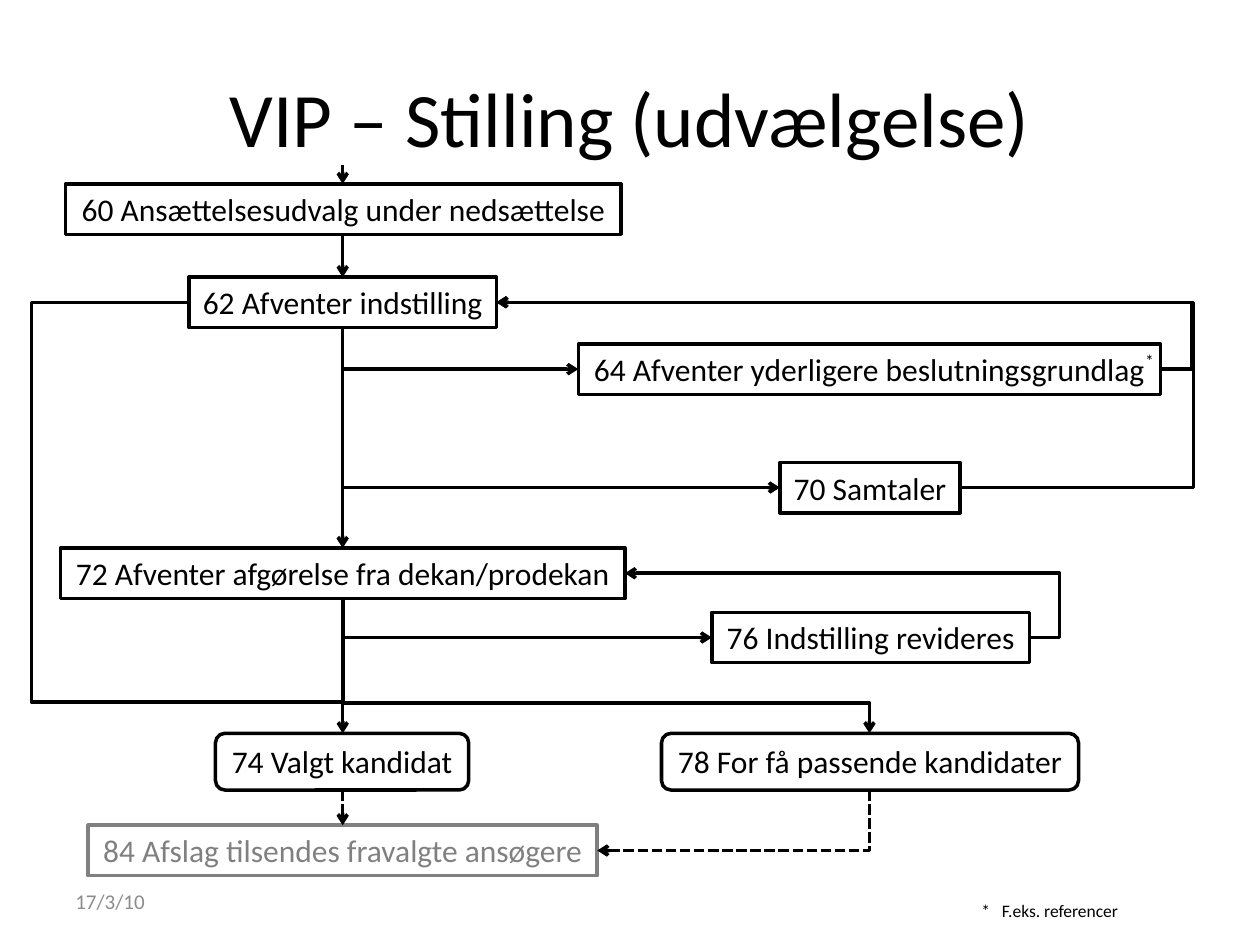
from dataclasses import dataclass

import pptx
import pptx.dml.color
import pptx.enum.dml
import pptx.enum.shapes
import pptx.enum.text
import pptx.oxml
import pptx.oxml.ns
import pptx.util
from pptx.util import Inches

COLORS = {"black": "000000", "gray": "808080", "date": "8C8C8C"}
FONT = "Calibri"
LINE_WIDTH = pptx.util.Pt(2)
BOX = pptx.enum.shapes.MSO_SHAPE.FLOWCHART_PROCESS
ROUNDED = pptx.enum.shapes.MSO_SHAPE.FLOWCHART_ALTERNATE_PROCESS
CENTER = pptx.enum.text.PP_ALIGN.CENTER
LEFT = pptx.enum.text.PP_ALIGN.LEFT
TOP = pptx.enum.text.MSO_ANCHOR.TOP
MIDDLE = pptx.enum.text.MSO_ANCHOR.MIDDLE


@dataclass
class Step:
    text: str
    left: float
    top: float
    width: float
    height: float = 0.4
    shape_type: int = BOX
    color: str = "black"


@dataclass
class Arrow:
    """An arrow; turns holds the fixed coordinates of its middle segments."""
    begin: tuple[float, float]
    end: tuple[float, float]
    geometry: str = "line"
    turns: tuple[float, ...] = ()
    starts_down: bool = False
    dashed: bool = False


@dataclass
class Label:
    text: str
    left: float
    top: float
    width: float
    height: float
    size: int = 10
    color: str = "black"
    anchor: int = TOP


SPINE = 2.72  # x of the main flow
REJECT = 6.9  # x of the branch to step 78

STEPS = [
    Step("60 Ansættelsesudvalg under nedsættelse", 0.52, 1.46, 4.41),
    Step("62 Afventer indstilling", 1.5, 2.2, 2.44),
    Step("64 Afventer yderligere beslutningsgrundlag", 4.59, 2.73, 4.62),
    Step("70 Samtaler", 6.19, 3.67, 1.43),
    Step("72 Afventer afgørelse fra dekan/prodekan", 0.48, 4.35, 4.48),
    Step("76 Indstilling revideres", 5.65, 4.86, 2.52),
    Step("74 Valgt kandidat", 1.71, 5.82, 2.01, 0.45, ROUNDED),
    Step("78 For få passende kandidater", 5.25, 5.82, 3.31, 0.45, ROUNDED),
    Step("84 Afslag tilsendes fravalgte ansøgere", 0.7, 6.55, 4.04, color="gray"),
]

ARROWS = [
    # Main flow
    Arrow((SPINE, 1.31), (SPINE, 1.46)),
    Arrow((SPINE, 1.87), (SPINE, 2.2)),
    Arrow((SPINE, 2.6), (SPINE, 4.35)),
    Arrow((SPINE, 6.27), (SPINE, 6.55), dashed=True),
    # Branches
    Arrow((SPINE, 2.6), (4.59, 2.93), "bentConnector2", starts_down=True),
    Arrow((SPINE, 2.6), (6.19, 3.87), "bentConnector2", starts_down=True),
    Arrow((SPINE, 4.75), (5.65, 5.06), "bentConnector2", starts_down=True),
    Arrow((SPINE, 4.75), (REJECT, 5.82), "bentConnector3", (5.58,), True),
    Arrow((REJECT, 6.27), (4.74, 6.75), "bentConnector2", (), True, True),
    Arrow((1.5, 2.4), (SPINE, 5.82), "bentConnector4", (0.25, 5.57)),
    # Returns
    Arrow((9.21, 2.93), (3.94, 2.4), "bentConnector3", (9.46,)),
    Arrow((7.62, 3.87), (3.94, 2.4), "bentConnector3", (9.47,)),
    Arrow((8.16, 5.06), (4.96, 4.55), "bentConnector3", (8.41,)),
]

LABELS = [
    Label("17/3/10", 0.5, 6.95, 2.33, 0.4, 12, "date", MIDDLE),
    Label("*   F.eks. referencer", 7.69, 7.09, 2.21, 0.27),
    Label("*", 8.99, 2.73, 0.27, 0.27),
]


def rgb(name: str) -> pptx.dml.color.RGBColor:
    return pptx.dml.color.RGBColor.from_string(COLORS[name])


def write(shape, text: str, size: int, color: str, alignment: int) -> None:
    paragraph = shape.text_frame.paragraphs[0]
    paragraph.alignment = alignment
    run = paragraph.add_run()
    run.text = text
    run.font.name = FONT
    run.font.size = pptx.util.Pt(size)
    run.font.color.rgb = rgb(color)


def draw_step(slide, step: Step) -> None:
    shape = slide.shapes.add_shape(step.shape_type, Inches(step.left), Inches(step.top),
                                   Inches(step.width), Inches(step.height))
    shape.shadow.inherit = False
    shape.fill.background()
    shape.line.color.rgb = rgb(step.color)
    shape.line.width = LINE_WIDTH
    frame = shape.text_frame
    frame.word_wrap = False
    frame.auto_size = pptx.enum.text.MSO_AUTO_SIZE.SHAPE_TO_FIT_TEXT
    frame.vertical_anchor = TOP
    write(shape, step.text, 18, step.color, CENTER)


def draw_label(slide, label: Label) -> None:
    shape = slide.shapes.add_textbox(Inches(label.left), Inches(label.top),
                                     Inches(label.width), Inches(label.height))
    shape.text_frame.word_wrap = True
    shape.text_frame.vertical_anchor = label.anchor
    write(shape, label.text, label.size, label.color, LEFT)


def turn_connector(connector, arrow: Arrow) -> None:
    """Rotate a connector so that its first segment runs downwards."""
    (x1, y1), (x2, y2) = arrow.begin, arrow.end
    length, breadth = abs(y2 - y1), abs(x2 - x1)
    connector.left = Inches((x1 + x2 - length) / 2)
    connector.top = Inches((y1 + y2 - breadth) / 2)
    connector.width, connector.height = Inches(length), Inches(breadth)
    goes_right = x2 > x1
    transform = connector._element.spPr.find(pptx.oxml.ns.qn("a:xfrm"))
    transform.set("rot", str((270 if goes_right else 90) * 60000))
    transform.set("flipH", "1" if goes_right else "0")


def draw_arrow(slide, arrow: Arrow) -> None:
    connector = slide.shapes.add_connector(
        pptx.enum.shapes.MSO_CONNECTOR.STRAIGHT,
        *(Inches(value) for value in arrow.begin + arrow.end))
    connector.line.color.rgb = rgb("black")
    connector.line.width = LINE_WIDTH
    if arrow.dashed:
        connector.line.dash_style = pptx.enum.dml.MSO_LINE.SQUARE_DOT
    if arrow.starts_down:
        turn_connector(connector, arrow)

    # Geometry, with each turn as a share of the distance along its axis
    properties = connector._element.spPr
    geometry = properties.find(pptx.oxml.ns.qn("a:prstGeom"))
    geometry.set("prst", arrow.geometry)
    for index, turn in enumerate(arrow.turns):
        axis = (index + arrow.starts_down) % 2
        begin, end = arrow.begin[axis], arrow.end[axis]
        share = round((turn - begin) / (end - begin) * 100000)
        guide = pptx.oxml.parse_xml(
            f'<a:gd {pptx.oxml.ns.nsdecls("a")} name="adj{index + 1}" fmla="val {share}"/>')
        geometry.find(pptx.oxml.ns.qn("a:avLst")).append(guide)

    # Arrowhead and no shadow
    namespace = pptx.oxml.ns.nsdecls("a")
    line = properties.find(pptx.oxml.ns.qn("a:ln"))
    line.append(pptx.oxml.parse_xml(f'<a:tailEnd {namespace} type="arrow"/>'))
    properties.append(pptx.oxml.parse_xml(f"<a:effectLst {namespace}/>"))


def main() -> None:
    presentation = pptx.Presentation()
    presentation.slide_width, presentation.slide_height = Inches(10), Inches(7.5)
    slide = presentation.slides.add_slide(presentation.slide_layouts[5])

    # Title
    title = slide.shapes.title
    title.left, title.top = Inches(0.5), Inches(0.3)
    title.width, title.height = Inches(9), Inches(1.25)
    title.text_frame.vertical_anchor = MIDDLE
    write(title, "VIP – Stilling (udvælgelse)", 44, "black", CENTER)

    # Flowchart
    for step in STEPS:
        draw_step(slide, step)
    for arrow in ARROWS:
        draw_arrow(slide, arrow)

    # Date and footnote
    for label in LABELS:
        draw_label(slide, label)

    presentation.save("out.pptx")


if __name__ == "__main__":
    main()
